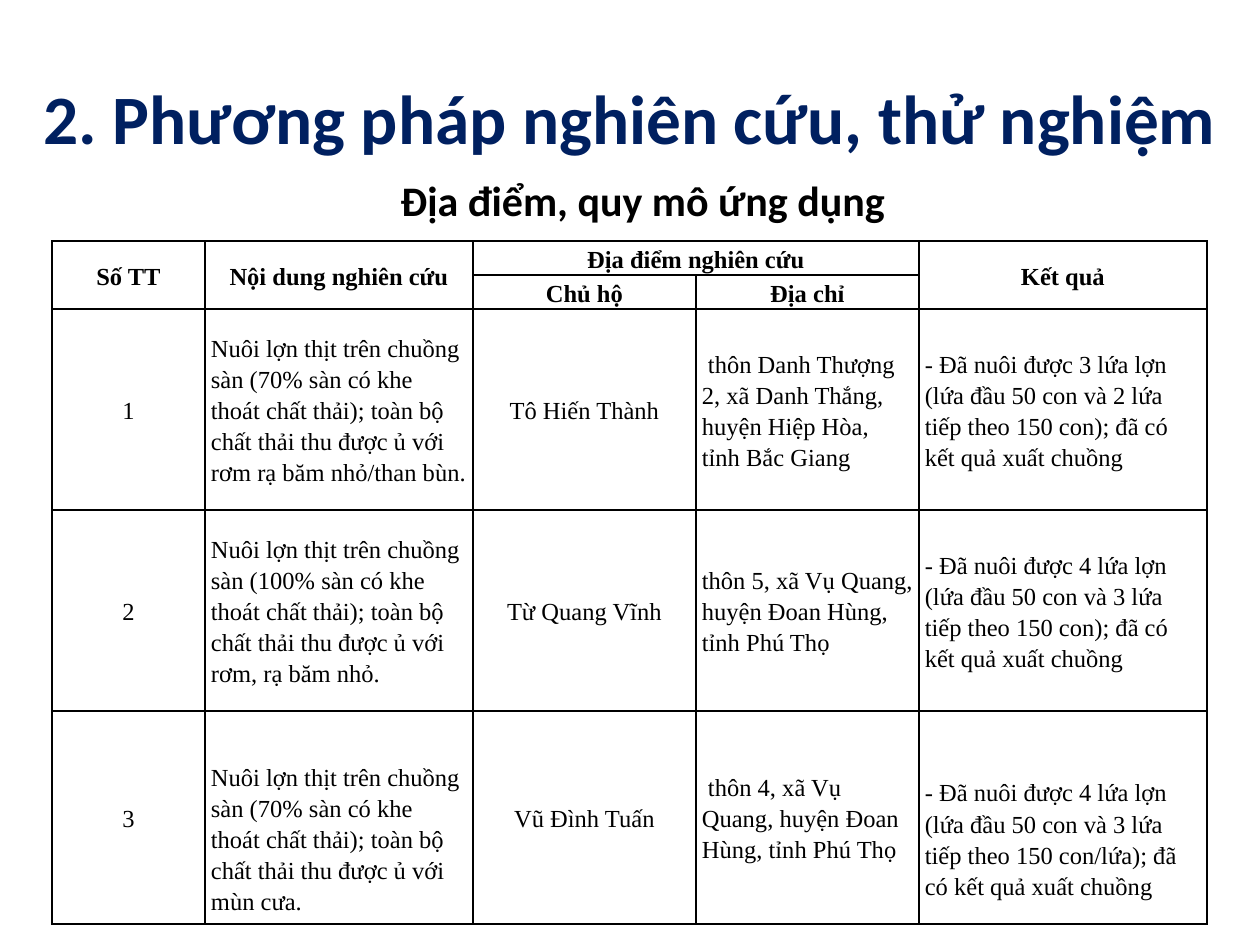
"""Build the slide on research sites and scale of application."""
from dataclasses import dataclass
from typing import Any

from lxml.etree import SubElement
from pptx import Presentation
from pptx.dml.color import RGBColor
from pptx.enum.text import MSO_ANCHOR as Anchor, PP_ALIGN as Align
from pptx.oxml.ns import qn
from pptx.util import Emu, Pt

NAVY = RGBColor(0x00, 0x20, 0x60)
BLACK = RGBColor(0, 0, 0)
HEADING_FONT = "Calibri"
TABLE_FONT = "Times New Roman"
SIDES = ("a:lnL", "a:lnR", "a:lnT", "a:lnB")

COLUMN_WIDTHS = (153, 268, 223, 223, 288)
ROW_HEIGHTS = (34, 34, 201, 201, 213)
CENTRED_COLUMNS = (0, 2)
HEADER_ROWS = 2
MERGES = (((0, 0), (1, 0)), ((0, 1), (1, 1)), ((0, 2), (0, 3)), ((0, 4), (1, 4)))
LOWERED_CELLS = ((4, 1), (4, 4))
ROWS = (
    ("Số TT", "Nội dung nghiên cứu", "Địa điểm nghiên cứu", "", "Kết quả"),
    ("", "", "Chủ hộ", "Địa chỉ", ""),
    ("1",
     "Nuôi lợn thịt trên chuồng sàn (70% sàn có khe thoát chất thải); "
     "toàn bộ chất thải thu được ủ với rơm rạ băm nhỏ/than bùn.",
     "Tô Hiến Thành",
     " thôn Danh Thượng 2, xã Danh Thắng, huyện Hiệp Hòa, tỉnh Bắc Giang",
     "- Đã nuôi được 3 lứa lợn (lứa đầu 50 con và 2 lứa tiếp theo 150 con); "
     "đã có kết quả xuất chuồng"),
    ("2",
     "Nuôi lợn thịt trên chuồng sàn (100% sàn có khe thoát chất thải); "
     "toàn bộ chất thải thu được ủ với rơm, rạ băm nhỏ.",
     "Từ Quang Vĩnh",
     "thôn 5, xã Vụ Quang, huyện Đoan Hùng, tỉnh Phú Thọ",
     "- Đã nuôi được 4 lứa lợn (lứa đầu 50 con và 3 lứa tiếp theo 150 con); "
     "đã có kết quả xuất chuồng"),
    ("3",
     "Nuôi lợn thịt trên chuồng sàn (70% sàn có khe thoát chất thải); "
     "toàn bộ chất thải thu được ủ với mùn cưa.",
     "Vũ Đình Tuấn",
     " thôn 4, xã Vụ Quang, huyện Đoan Hùng, tỉnh Phú Thọ",
     "- Đã nuôi được 4 lứa lợn (lứa đầu 50 con và 3 lứa tiếp theo 150 con/lứa); "
     "đã có kết quả xuất chuồng"),
)


def px(length):
    """Turn pixels into EMU."""
    return Emu(round(length * 914400 / 126))


def write_text(frame, text, font, size, color=BLACK, bold=False,
               align=Align.LEFT, line_spacing=None, gap=0):
    """Write one formatted paragraph into a text frame."""
    para = frame.paragraphs[0]
    para.alignment = align
    para.line_spacing = line_spacing
    para.space_before = para.space_after = Pt(gap)
    span = para.add_run()
    span.text = text
    span.font.name = font
    span.font.size = Pt(size)
    span.font.bold = bold
    span.font.color.rgb = color


def draw_borders(cell, color=BLACK, width=1):
    """Draw a solid line on every side of a table cell."""
    properties = cell._tc.get_or_add_tcPr()
    for side in SIDES:
        line = SubElement(properties, qn(side), w=str(Pt(width)))
        fill = SubElement(line, qn("a:solidFill"))
        SubElement(fill, qn("a:srgbClr"), val=str(color))


@dataclass
class SlideBuilder:
    """Hold the style and the current slide."""
    slide: Any
    heading_font: str = HEADING_FONT
    table_font: str = TABLE_FONT
    table_size: int = 14

    def heading(self, text, left, top, width, height, size, color=BLACK,
                wrap=True, **style):
        """Add a bold heading."""
        box = self.slide.shapes.add_textbox(px(left), px(top), px(width), px(height))
        frame = box.text_frame
        frame.word_wrap = wrap
        frame.vertical_anchor = Anchor.MIDDLE
        write_text(frame, text, self.heading_font, size, color, bold=True, **style)

    def table(self, left, top):
        """Add the bordered table of research sites."""
        frame = self.slide.shapes.add_table(
            len(ROWS), len(COLUMN_WIDTHS), px(left), px(top),
            px(sum(COLUMN_WIDTHS)), px(sum(ROW_HEIGHTS)))
        table = frame.table
        table.first_row = table.horz_banding = False
        for column, width in zip(table.columns, COLUMN_WIDTHS):
            column.width = px(width)
        for row, height in zip(table.rows, ROW_HEIGHTS):
            row.height = px(height)
        for row, texts in enumerate(ROWS):
            for column, text in enumerate(texts):
                self.cell(table.cell(row, column), text, row, column)
        for first, last in MERGES:
            table.cell(*first).merge(table.cell(*last))

    def cell(self, cell, text, row, column):
        """Format and fill one table cell."""
        draw_borders(cell)
        cell.fill.background()
        cell.vertical_anchor = Anchor.MIDDLE
        cell.margin_left = cell.margin_right = px(6)
        cell.margin_top = px(42 if (row, column) in LOWERED_CELLS else 0)
        cell.margin_bottom = 0
        header = row < HEADER_ROWS
        centred = header or column in CENTRED_COLUMNS
        if text:
            write_text(cell.text_frame, text, self.table_font, self.table_size,
                       bold=header, align=Align.CENTER if centred else Align.LEFT,
                       line_spacing=1.15, gap=3)


def main():
    """Build and save the deck."""
    deck = Presentation()
    deck.slide_width, deck.slide_height = px(1260), px(945)
    page = SlideBuilder(deck.slides.add_slide(deck.slide_layouts[6]))
    page.heading("2. Phương pháp nghiên cứu, thử nghiệm", 0, 38, 1260, 158,
                 size=39.6, color=NAVY, align=Align.CENTER)
    page.heading("Địa điểm, quy mô ứng dụng", 388, 168, 524, 63, size=24, wrap=False)
    page.table(52, 241)
    deck.save("out.pptx")


if __name__ == "__main__":
    main()
